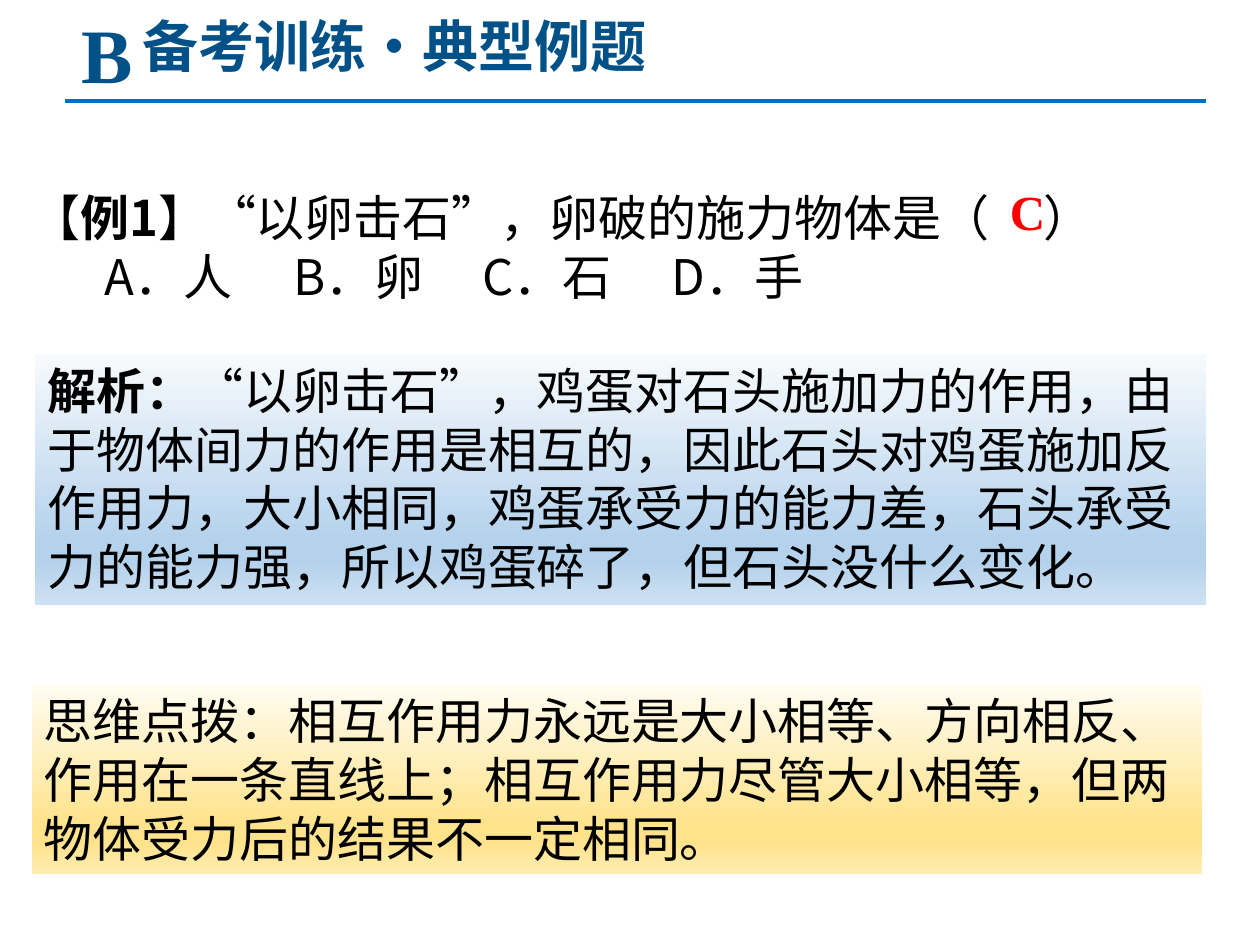
from lxml import etree
from pptx import Presentation
from pptx.dml.color import RGBColor
from pptx.enum import lang, shapes, text
from pptx.oxml import ns, parse_xml
from pptx.util import Inches, Pt

SANS = "Noto Sans CJK SC"
SERIF = "Times New Roman"
BLACK = RGBColor(0x00, 0x00, 0x00)
RED = RGBColor(0xFF, 0x00, 0x00)
NAVY = RGBColor(0x00, 0x51, 0x88)
BLUE = RGBColor(0x00, 0x70, 0xC0)
OUTLINE = RGBColor(0x50, 0x93, 0xCF)
BLUE_FADE = [RGBColor.from_string(c) for c in ("F7FAFD", "B5D2EC", "B5D2EC", "CEE1F2")]
GOLD_FADE = [RGBColor.from_string(c) for c in ("FFFCF2", "FFE38C", "FFE38C", "FFECB2")]
FADE_STOPS = (0, 74, 83, 100)


def add_run(paragraph, wording, font=SANS, size=28, color=BLACK, bold=False):
    """Append formatted wording to a paragraph and return the run."""
    run = paragraph.add_run()
    run.text = wording
    run.font.name = font
    run.font.size = Pt(size)
    run.font.bold = bold
    run.font.color.rgb = color
    run.font.language_id = lang.MSO_LANGUAGE_ID.SIMPLIFIED_CHINESE
    east_asian = etree.SubElement(run.font._element, ns.qn("a:ea"))
    east_asian.set("typeface", SANS)
    return run


def add_text_box(slide, left, top, width, height, wrap=True):
    """Add an empty text box and return its text frame."""
    frame = slide.shapes.add_textbox(left, top, width, height).text_frame
    frame.word_wrap = wrap
    return frame


def set_tabs(paragraph, *stops):
    """Give a paragraph left tab stops."""
    tabs = etree.SubElement(paragraph._p.get_or_add_pPr(), ns.qn("a:tabLst"))
    for stop in stops:
        etree.SubElement(tabs, ns.qn("a:tab"), pos=str(stop), algn="l")


def outline_text(run, color, width):
    """Draw a line around the letters of a run."""
    run.font._element.insert(0, parse_xml(
        f'<a:ln {ns.nsdecls("a")} w="{Pt(width)}"><a:solidFill>'
        f'<a:srgbClr val="{color}"/></a:solidFill></a:ln>'))


def add_header(slide, left, top, width):
    """Place the initial, the section title and the rule beneath them."""
    rule_y = top + Inches(0.8)
    rule = slide.shapes.add_connector(
        shapes.MSO_CONNECTOR.STRAIGHT, left, rule_y, left + width, rule_y)
    rule.line.color.rgb = BLUE
    rule.line.width = Pt(2.25)
    etree.SubElement(rule._element.spPr, ns.qn("a:effectLst"))

    title = add_text_box(slide, left + Inches(0.51), top + Inches(0.13), Inches(5.56), Inches(0.46))
    title.vertical_anchor = text.MSO_ANCHOR.MIDDLE
    title.paragraphs[0].space_before = Pt(10)
    add_run(title.paragraphs[0], "备考训练·典型例题", size=32, color=NAVY, bold=True)

    initial = add_text_box(slide, left + Inches(0.03), top, Inches(0.54), Inches(0.84), wrap=False)
    initial.paragraphs[0].alignment = text.PP_ALIGN.CENTER
    letter = add_run(initial.paragraphs[0], "B", SERIF, 44, NAVY, True)
    outline_text(letter, OUTLINE, 0.83)


def add_question(slide, left, top, width, height):
    """Place the question, its evenly spaced options and the answer."""
    frame = add_text_box(slide, left, top, width, height)
    frame.margin_left = frame.margin_right = 0
    question, options = frame.paragraphs[0], frame.add_paragraph()
    for paragraph in (question, options):
        paragraph.line_spacing = Pt(33.6)
    set_tabs(question, Inches(8.03))
    add_run(question, "【")
    add_run(question, "例1", bold=True)
    add_run(question, "】“以卵击石”，卵破的施力物体是（\t）")

    indent, step = Inches(0.58), Inches(1.65)
    options._p.get_or_add_pPr().set("marL", str(indent))
    options._p.get_or_add_pPr().set("indent", "0")
    set_tabs(options, *(indent + step * i for i in (1, 2, 3)))
    add_run(options, "\t".join(("A．人", "B．卵", "C．石", "D．手")))

    answer = add_text_box(slide, left + Inches(7.55), top - Inches(0.05), Inches(0.71), Inches(0.57))
    answer.paragraphs[0].alignment = text.PP_ALIGN.CENTER
    add_run(answer.paragraphs[0], "C", SERIF, color=RED, bold=True)


def add_note(slide, left, top, width, height, fade, parts):
    """Place a panel with a vertical gradient and runs of wording."""
    panel = slide.shapes.add_shape(shapes.MSO_SHAPE.RECTANGLE, left, top, width, height)
    panel.shadow.inherit = False
    panel.line.fill.background()
    stops = "".join(f'<a:gs pos="{at * 1000}"><a:srgbClr val="{color}"/></a:gs>'
                    for at, color in zip(FADE_STOPS, fade))
    panel._element.spPr.find(ns.qn("a:prstGeom")).addnext(parse_xml(
        f'<a:gradFill {ns.nsdecls("a")} rotWithShape="1"><a:gsLst>{stops}</a:gsLst>'
        '<a:lin ang="5400000" scaled="0"/></a:gradFill>'))
    frame = panel.text_frame
    frame.word_wrap = True
    frame.vertical_anchor = text.MSO_ANCHOR.TOP
    frame.paragraphs[0].alignment = text.PP_ALIGN.LEFT
    for wording, style in parts:
        add_run(frame.paragraphs[0], wording, **style)


def main():
    """Build the slide and save it."""
    deck = Presentation()
    deck.slide_width, deck.slide_height = Inches(10), Inches(7.5)
    slide = deck.slides.add_slide(deck.slide_layouts[6])
    add_question(slide, Inches(0.25), Inches(1.44), Inches(9.56), Inches(1.05))
    add_note(slide, Inches(0.28), Inches(2.81), Inches(9.29), Inches(1.99), BLUE_FADE, [
        ("解析：", {"bold": True}),
        ("“以卵击石”，", {}),
        ("鸡蛋对石头施加力的作用，由于物体间力的作用是相互的，因此石头对鸡蛋施加反作用力，"
         "大小相同，鸡蛋承受力的能力差，石头承受力的能力强，所以鸡蛋碎了，但石头没什么变化。",
         {"font": SERIF}),
    ])
    add_header(slide, Inches(0.52), Inches(0), Inches(9.05))
    add_note(slide, Inches(0.25), Inches(5.43), Inches(9.29), Inches(1.51), GOLD_FADE, [
        ("思维点拨：相互作用力永远是大小相等、方向相反、作用在一条直线上；"
         "相互作用力尽管大小相等，但两物体受力后的结果不一定相同。", {"font": SERIF}),
    ])
    deck.save("out.pptx")


if __name__ == "__main__":
    main()
